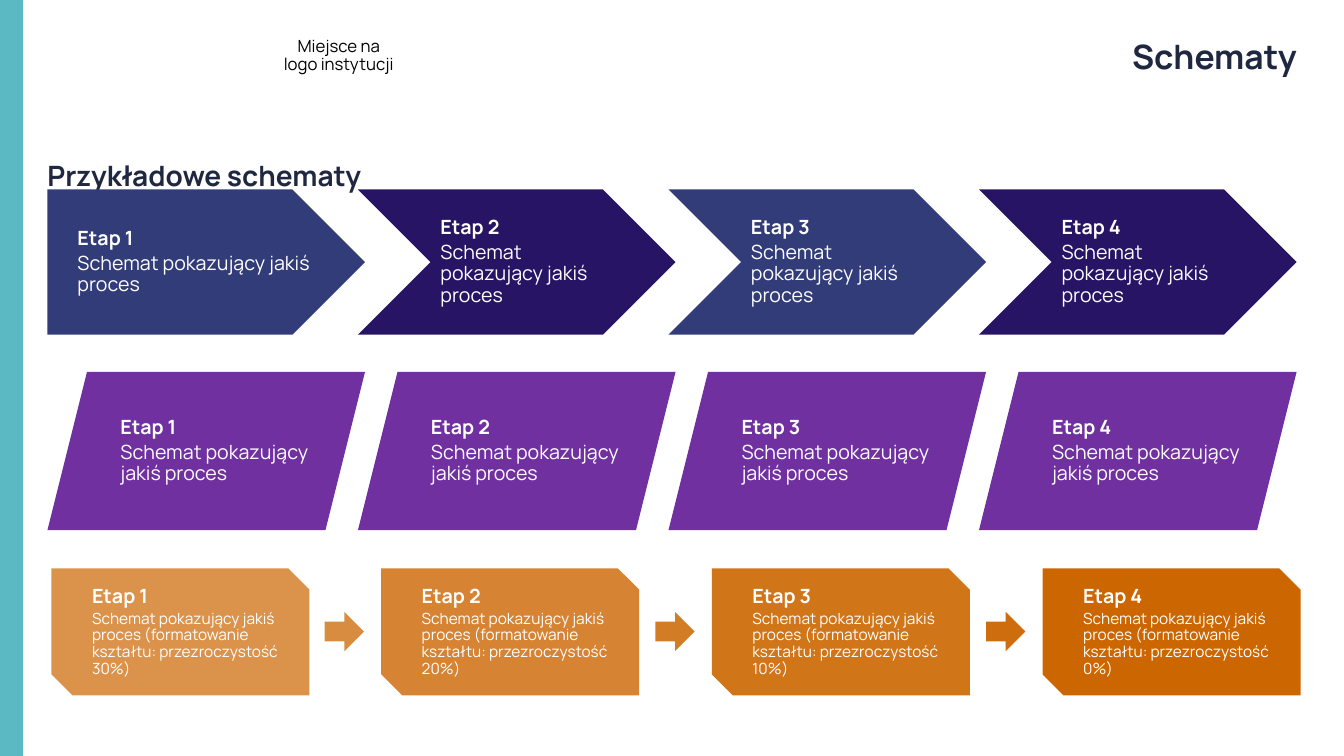
from dataclasses import dataclass

import pptx
import pptx.dml.color
import pptx.enum.shapes
import pptx.enum.text
import pptx.oxml
import pptx.oxml.ns
import pptx.util

SHAPE = pptx.enum.shapes.MSO_SHAPE
ALIGN = pptx.enum.text.PP_ALIGN
EMU_PER_PX = 9144  # 100 px to the inch


@dataclass(frozen=True)
class Theme:
    font: str = "Manrope"
    white: str = "FFFFFF"
    black: str = "000000"
    ink: str = "202841"
    teal: str = "5AB9C3"
    blue: str = "323C78"
    navy: str = "281464"
    purple: str = "7030A0"
    orange: str = "CC6600"
    title: int = 24
    heading: int = 20
    step: int = 14
    logo: int = 12
    small: int = 11


@dataclass(frozen=True)
class Box:
    x: int
    y: int
    w: int
    h: int


@dataclass(frozen=True)
class Step:
    kind: SHAPE
    fill: str
    body: str
    opacity: int = 100
    indent: int = 20


@dataclass(frozen=True)
class Row:
    first: Box
    last_x: int
    body_size: int
    steps: list[Step]


THEME = Theme()
BODY = "Schemat pokazujący jakiś proces"


def px(n: int) -> pptx.util.Emu:
    return pptx.util.Emu(n * EMU_PER_PX)


def add_text(tf, text: str, *, size: int, color: str, bold: bool = False,
             align: ALIGN = ALIGN.LEFT, line: float = 1.0, indent: int = 0) -> None:
    """Append one paragraph, filling the empty first one if there is one."""
    is_first = not tf.paragraphs[0].runs
    p = tf.paragraphs[0] if is_first else tf.add_paragraph()
    p.alignment = align
    p.line_spacing = line
    p.space_before = pptx.util.Pt(0 if is_first else round(size * 0.2, 1))
    if indent:
        p._p.get_or_add_pPr().set("marL", str(px(indent)))
    r = p.add_run()
    r.text = text
    r.font.name = THEME.font
    r.font.size = pptx.util.Pt(size)
    r.font.bold = bold
    r.font.color.rgb = pptx.dml.color.RGBColor.from_string(color)


def add_shape(s, kind: SHAPE, box: Box, fill: str, opacity: int = 100):
    sp = s.shapes.add_shape(kind, px(box.x), px(box.y), px(box.w), px(box.h))
    sp.shadow.inherit = False
    sp.line.fill.background()
    sp.fill.solid()
    sp.fill.fore_color.rgb = pptx.dml.color.RGBColor.from_string(fill)
    if opacity < 100:
        clr = sp._element.spPr.find(".//" + pptx.oxml.ns.qn("a:srgbClr"))
        ns = pptx.oxml.ns.nsdecls("a")
        clr.append(pptx.oxml.parse_xml(f'<a:alpha {ns} val="{opacity * 1000}"/>'))
    sp.text_frame.word_wrap = True
    sp.text_frame.vertical_anchor = pptx.enum.text.MSO_ANCHOR.MIDDLE
    return sp


def add_label(s, box: Box, text: str, size: int, align: ALIGN) -> None:
    tf = s.shapes.add_textbox(px(box.x), px(box.y), px(box.w), px(box.h)).text_frame
    tf.word_wrap = True
    tf.vertical_anchor = pptx.enum.text.MSO_ANCHOR.MIDDLE
    tf.margin_left = tf.margin_right = tf.margin_top = tf.margin_bottom = 0
    add_text(tf, text, size=size, color=THEME.ink, bold=True, align=align)


def add_row(s, row: Row) -> None:
    """Spread the steps evenly between the first and last left edges."""
    box = row.first
    for i, step in enumerate(row.steps):
        x = box.x + (row.last_x - box.x) * i // (len(row.steps) - 1)
        sp = add_shape(s, step.kind, Box(x, box.y, box.w, box.h), step.fill, step.opacity)
        tf = sp.text_frame
        add_text(tf, f"Etap {i + 1}", size=THEME.step, color=THEME.white, bold=True,
                 line=0.9, indent=step.indent)
        add_text(tf, step.body, size=row.body_size, color=THEME.white,
                 line=0.9, indent=step.indent)


ROWS = [
    # Chevron chain in alternating blues
    Row(Box(47, 188, 315, 144), 971, THEME.step,
        [Step(SHAPE.PENTAGON, THEME.blue, BODY)]
        + [Step(SHAPE.CHEVRON, fill, BODY, indent=0)
           for fill in (THEME.navy, THEME.blue, THEME.navy)]),
    # Purple parallelograms
    Row(Box(47, 369, 315, 157), 971, THEME.step,
        [Step(SHAPE.PARALLELOGRAM, THEME.purple, BODY)] * 4),
    # Orange cards with falling transparency
    Row(Box(51, 564, 256, 126), 1034, THEME.small,
        [Step(SHAPE.SNIP_2_DIAG_RECTANGLE, THEME.orange,
              f"{BODY} (formatowanie kształtu: przezroczystość {clear}%)", 100 - clear)
         for clear in (30, 20, 10, 0)]),
]


def main() -> None:
    prs = pptx.Presentation()
    prs.slide_width, prs.slide_height = px(1333), px(750)
    s = prs.slides.add_slide(prs.slide_layouts[6])

    # Side band and header
    add_shape(s, SHAPE.RECTANGLE, Box(0, 0, 23, 750), THEME.teal)
    logo = add_shape(s, SHAPE.ROUNDED_RECTANGLE, Box(265, 24, 142, 63), THEME.white)
    add_text(logo.text_frame, "Miejsce na logo instytucji", size=THEME.logo,
             color=THEME.black, align=ALIGN.CENTER, line=0.9)
    add_label(s, Box(367, 24, 919, 63), "Schematy", THEME.title, ALIGN.RIGHT)
    add_label(s, Box(47, 155, 1239, 38), "Przykładowe schematy", THEME.heading, ALIGN.LEFT)

    # Process rows
    for row in ROWS:
        add_row(s, row)

    # Arrows between the orange cards
    for i, opacity in enumerate((75, 85, 95)):
        add_shape(s, SHAPE.RIGHT_ARROW, Box(322 + 328 * i, 607, 39, 39),
                  THEME.orange, opacity)

    prs.save("out.pptx")


if __name__ == "__main__":
    main()
